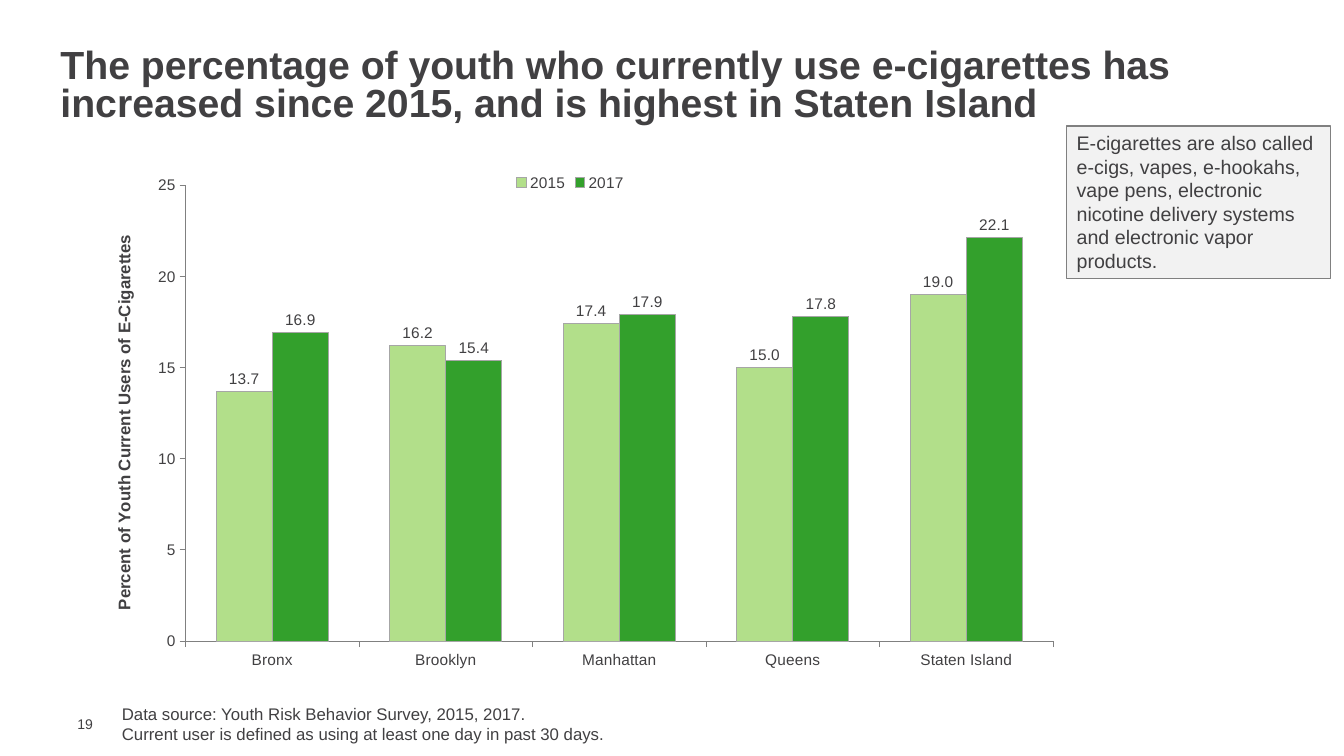
from dataclasses import dataclass

from lxml import etree
from pptx import Presentation
from pptx.chart.data import CategoryChartData
from pptx.dml.color import RGBColor
from pptx.enum.chart import XL_CHART_TYPE, XL_LABEL_POSITION, XL_LEGEND_POSITION, XL_TICK_MARK
from pptx.enum.shapes import MSO_SHAPE
from pptx.enum.text import MSO_ANCHOR, PP_ALIGN
from pptx.oxml.ns import qn
from pptx.util import Inches, Pt

COLUMNS = XL_CHART_TYPE.COLUMN_CLUSTERED
OUTSIDE_END = XL_LABEL_POSITION.OUTSIDE_END
LEGEND_TOP = XL_LEGEND_POSITION.TOP
TICK_OUTSIDE, TICK_NONE = XL_TICK_MARK.OUTSIDE, XL_TICK_MARK.NONE
RECTANGLE = MSO_SHAPE.RECTANGLE
TOP, MIDDLE = MSO_ANCHOR.TOP, MSO_ANCHOR.MIDDLE
LEFT = PP_ALIGN.LEFT

BOROUGHS = ["Bronx", "Brooklyn", "Manhattan", "Queens", "Staten Island"]
USERS_BY_YEAR = {
    "2015": [13.7, 16.2, 17.4, 15, 19],
    "2017": [16.9, 15.4, 17.9, 17.8, 22.1],
}


@dataclass(frozen=True)
class Theme:
    """Colours, font and type sizes of the slide."""
    font: str = "Arial"
    text: RGBColor = RGBColor(0x41, 0x40, 0x42)
    panel: RGBColor = RGBColor(0xF2, 0xF2, 0xF2)
    rule: RGBColor = RGBColor(0x80, 0x80, 0x80)
    bar_outline: RGBColor = RGBColor(0xA6, 0xA6, 0xA6)
    bars: tuple = (RGBColor(0xB2, 0xDF, 0x8A), RGBColor(0x33, 0xA0, 0x2C))
    title_size: int = 28
    callout_size: int = 14
    note_size: int = 12
    chart_size: int = 11
    number_size: int = 10
    line_width: float = 0.75


class SlideBuilder:
    """Adds styled elements to one slide."""

    def __init__(self, slide, theme):
        self.slide = slide
        self.theme = theme

    def style_font(self, font, size, bold=False):
        font.name = self.theme.font
        font.size = Pt(size)
        font.bold = bold
        font.color.rgb = self.theme.text

    def style_line(self, line, color):
        line.color.rgb = color
        line.width = Pt(self.theme.line_width)

    def set_text(self, shape, text, size, bold=False, anchor=TOP):
        text_frame = shape.text_frame
        text_frame.text = text
        text_frame.word_wrap = True
        text_frame.vertical_anchor = anchor
        for paragraph in text_frame.paragraphs:
            paragraph.alignment = LEFT
            for run in paragraph.runs:
                self.style_font(run.font, size, bold)
        return text_frame

    def title(self, text, left, top, width, height):
        shape = self.slide.shapes.title
        shape.left, shape.top, shape.width, shape.height = left, top, width, height
        text_frame = self.set_text(shape, text, self.theme.title_size, True, MIDDLE)
        text_frame.paragraphs[0].line_spacing = 0.8

    def text_box(self, text, size, left, top, width, height):
        shape = self.slide.shapes.add_textbox(left, top, width, height)
        return self.set_text(shape, text, size)

    def page_number(self, text, left, top, width, height):
        text_frame = self.text_box(text, self.theme.number_size, left, top, width, height)
        text_frame.vertical_anchor = MIDDLE
        text_frame.margin_top = text_frame.margin_right = text_frame.margin_bottom = 0

    def callout(self, text, left, top, width, height):
        shape = self.slide.shapes.add_shape(RECTANGLE, left, top, width, height)
        shape.shadow.inherit = False
        shape.fill.solid()
        shape.fill.fore_color.rgb = self.theme.panel
        self.style_line(shape.line, self.theme.rule)
        self.set_text(shape, text, self.theme.callout_size)

    def place(self, layout, x, y, w=None, h=None):
        manual = etree.SubElement(layout, qn("c:manualLayout"))
        settings = {"xMode": "edge", "yMode": "edge", "x": x, "y": y, "w": w, "h": h}
        if w is not None:
            settings = {"layoutTarget": "inner", **settings}
        for name, value in settings.items():
            if value is not None:
                etree.SubElement(manual, qn(f"c:{name}")).set("val", str(value))

    def style_axis(self, axis):
        axis.has_major_gridlines = False
        axis.major_tick_mark = TICK_OUTSIDE
        axis.minor_tick_mark = TICK_NONE
        self.style_font(axis.tick_labels.font, self.theme.chart_size)
        self.style_line(axis.format.line, self.theme.rule)

    def column_chart(self, categories, values_by_series, axis_title, left, top, width, height):
        data = CategoryChartData(number_format="0.0")
        data.categories = categories
        for name, values in values_by_series.items():
            data.add_series(name, values)
        chart = self.slide.shapes.add_chart(COLUMNS, left, top, width, height, data).chart
        self.style_font(chart.font, self.theme.chart_size)
        chart.has_title = False

        self.style_axis(chart.category_axis)
        value_axis = chart.value_axis
        self.style_axis(value_axis)
        value_axis.minimum_scale, value_axis.maximum_scale = 0, 25
        value_axis.major_unit = 5
        value_axis.tick_labels.number_format = "0"
        value_axis.tick_labels.number_format_is_linked = False
        title_paragraph = value_axis.axis_title.text_frame.paragraphs[0]
        title_paragraph.text = axis_title
        self.style_font(title_paragraph.runs[0].font, self.theme.note_size, True)

        plot = chart.plots[0]
        plot.gap_width = 109
        plot.vary_by_categories = False
        for series, color in zip(plot.series, self.theme.bars):
            series.format.fill.solid()
            series.format.fill.fore_color.rgb = color
            self.style_line(series.format.line, self.theme.bar_outline)
            labels = series.data_labels
            labels.show_value = True
            labels.number_format = "0.0"
            labels.number_format_is_linked = False
            labels.position = OUTSIDE_END
            self.style_font(labels.font, self.theme.chart_size)

        chart.has_legend = True
        legend = chart.legend
        legend.position = LEGEND_TOP
        legend.include_in_layout = False
        self.style_font(legend.font, self.theme.chart_size)

        plot_area = chart.element.find(".//" + qn("c:plotArea"))
        plot_layout = plot_area.find(qn("c:layout"))
        if plot_layout is None:
            plot_layout = etree.Element(qn("c:layout"))
            plot_area.insert(0, plot_layout)
        self.place(plot_layout, 0.096, 0.05, 0.888, 0.882)
        legend_layout = etree.Element(qn("c:layout"))
        chart.element.find(".//" + qn("c:legendPos")).addnext(legend_layout)
        self.place(legend_layout, 0.43, 0.02)


def main():
    theme = Theme()
    presentation = Presentation()
    presentation.slide_width = Inches(13.33)
    presentation.slide_height = Inches(7.5)
    builder = SlideBuilder(presentation.slides.add_slide(presentation.slide_layouts[5]), theme)
    builder.page_number("19", Inches(0.67), Inches(7.1), Inches(0.43), Inches(0.17))
    builder.title(
        "The percentage of youth who currently use e-cigarettes has increased since 2015, "
        "and is highest in Staten Island",
        Inches(0.5), Inches(0.44), Inches(12.42), Inches(0.85))
    builder.text_box(
        "Data source: Youth Risk Behavior Survey, 2015, 2017.\n"
        "Current user is defined as using at least one day in past 30 days.",
        theme.note_size, Inches(1.11), Inches(6.93), Inches(9.71), Inches(0.5))
    builder.column_chart(
        BOROUGHS, USERS_BY_YEAR, "Percent of Youth Current Users of E-Cigarettes",
        Inches(0.91), Inches(1.58), Inches(9.69), Inches(5.13))
    builder.callout(
        "E-cigarettes are also called e-cigs, vapes, e-hookahs, vape pens, electronic "
        "nicotine delivery systems and electronic vapor products.",
        Inches(10.58), Inches(1.25), Inches(2.62), Inches(1.51))
    presentation.save("out.pptx")


if __name__ == "__main__":
    main()
